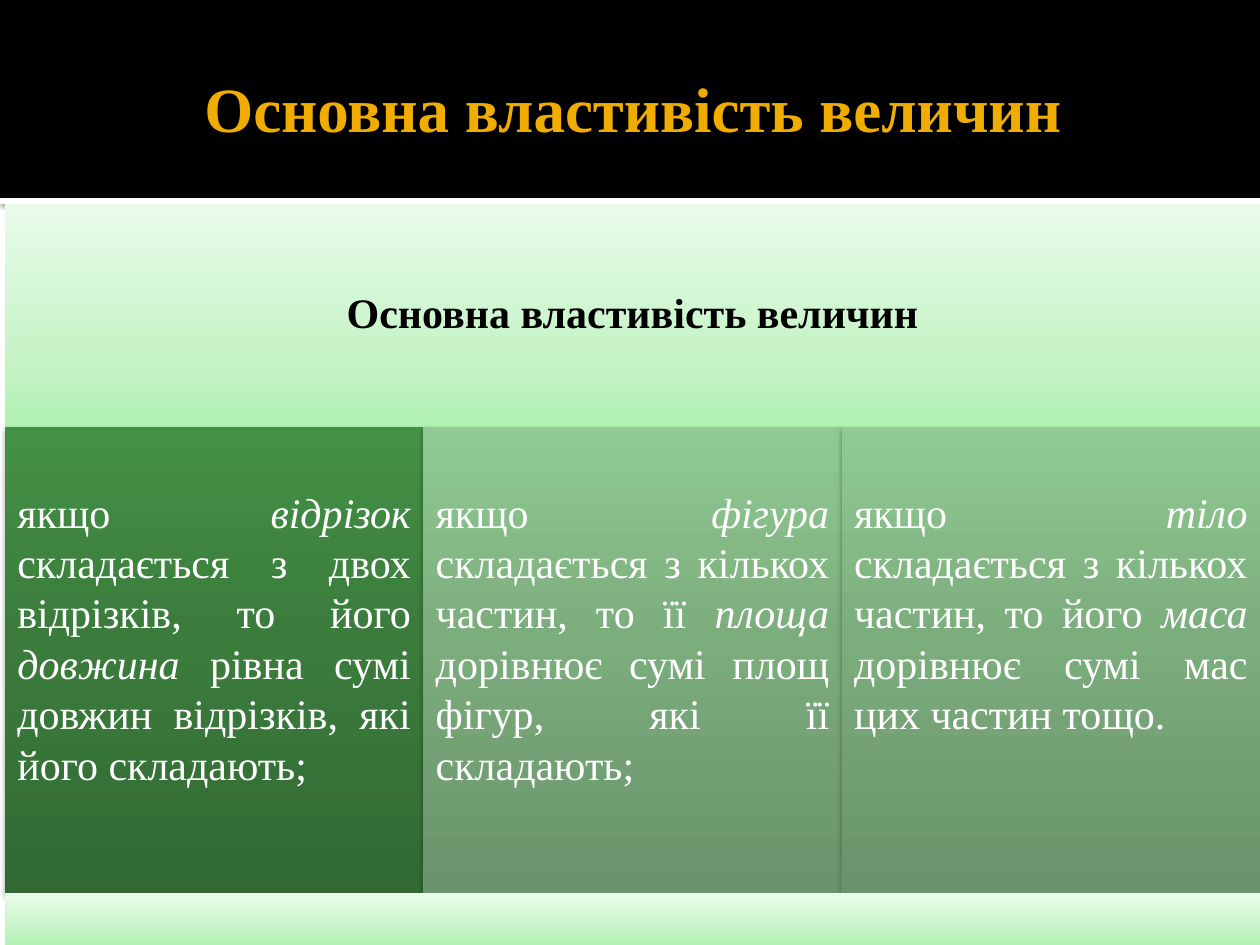
"""Build a slide on the main property of quantities, with three example panels."""
from lxml import etree
from pptx import Presentation
from pptx import util as u
from pptx.dml.color import RGBColor
from pptx.enum import shapes, text
from pptx.oxml.ns import qn

TITLE = "Основна властивість величин"
PANELS = [
    ("dark", [("якщо ", False), ("відрізок", True),
              (" складається з двох відрізків, то його ", False), ("довжина", True),
              (" рівна сумі довжин відрізків, які його складають;", False)]),
    ("soft", [("якщо ", False), ("фігура", True),
              (" складається з кількох частин, то її ", False), ("площа", True),
              (" дорівнює сумі площ фігур, які її складають;", False)]),
    ("soft", [("якщо ", False), ("тіло", True),
              (" складається з кількох частин, то його ", False), ("маса", True),
              (" дорівнює сумі мас цих частин тощо.", False)]),
]
COLORS = {"black": "000000", "white": "FFFFFF", "gold": "F0AD00"}
GRADIENTS = {
    "pale": [(0, "B1F1B2"), (35, "C8F4C9"), (100, "E9FCEA")],
    "dark": [(0, "326933"), (55, "3B7C3C"), (100, "449146")],
    "soft": [(0, "69936A"), (55, "7CAD7D"), (100, "90CA92")],
}
FONT = "Times New Roman"
WIDTH, HEIGHT = 25.4, 19.05
BAND_HEIGHT = 3.99
LEFT, HEADER_TOP, PANEL_TOP, FOOTER_TOP = 0.1, 4.11, 8.6, 18.01
INSET = 0.25


def add_color(parent, color):
    return etree.SubElement(parent, qn("a:srgbClr"), val=color)


def add_gradient(box, stops):
    fill = etree.Element(qn("a:gradFill"), rotWithShape="1")
    stop_list = etree.SubElement(fill, qn("a:gsLst"))
    for position, color in stops:
        add_color(etree.SubElement(stop_list, qn("a:gs"), pos=str(position * 1000)), color)
    etree.SubElement(fill, qn("a:lin"), ang=str(270 * 60000), scaled="0")
    box._element.spPr.find(qn("a:ln")).addprevious(fill)


def add_shadow(box, opacity, blur, distance):
    effects = box._element.spPr.find(qn("a:effectLst"))
    shadow = etree.SubElement(effects, qn("a:outerShdw"), blurRad=str(u.Pt(blur)),
                              dist=str(u.Pt(distance)), dir=str(90 * 60000), rotWithShape="0")
    color = add_color(shadow, COLORS["black"])
    etree.SubElement(color, qn("a:alpha"), val=str(opacity * 1000))


def add_block(page, left, top, width, height, fill):
    box = page.shapes.add_shape(shapes.MSO_SHAPE.RECTANGLE,
                                *map(u.Cm, (left, top, width, height)))
    box.line.fill.background()
    box.shadow.inherit = False
    if fill in GRADIENTS:
        add_gradient(box, GRADIENTS[fill])
    else:
        box.fill.solid()
        box.fill.fore_color.rgb = RGBColor.from_string(COLORS[fill])
    return box


def write(box, runs, size, color, align, bold=False, spacing=None,
          anchor=text.MSO_ANCHOR.MIDDLE, insets=(INSET,) * 4):
    frame = box.text_frame
    frame.word_wrap = True
    frame.vertical_anchor = anchor
    (frame.margin_left, frame.margin_top,
     frame.margin_right, frame.margin_bottom) = map(u.Cm, insets)
    para = frame.paragraphs[0]
    para.alignment = align
    para.line_spacing = spacing
    for words, italic in runs:
        span = para.add_run()
        span.text = words
        span.font.name = FONT
        span.font.size = u.Pt(size)
        span.font.bold = bold
        span.font.italic = italic
        span.font.color.rgb = RGBColor.from_string(COLORS[color])


def main():
    deck = Presentation()
    deck.slide_width, deck.slide_height = u.Cm(WIDTH), u.Cm(HEIGHT)
    page = deck.slides.add_slide(deck.slide_layouts[6])
    center, justify = text.PP_ALIGN.CENTER, text.PP_ALIGN.JUSTIFY
    inner_width = WIDTH - LEFT

    strip = add_block(page, 0, BAND_HEIGHT, WIDTH, HEADER_TOP - BAND_HEIGHT, "white")
    add_shadow(strip, 60, 2.5, 0.8)
    add_block(page, 0, 0, WIDTH, BAND_HEIGHT, "black")
    title = page.shapes.add_textbox(*map(u.Cm, (1.27, 0.43, 22.86, 3.48)))
    write(title, [(TITLE, False)], 36, "gold", center, bold=True,
          insets=(0.25, 0.13, 0.13, 0.13))

    header = add_block(page, LEFT, HEADER_TOP, inner_width, PANEL_TOP - HEADER_TOP, "pale")
    write(header, [(TITLE, False)], 24, "black", center, bold=True, spacing=0.9)

    panel_width = inner_width / len(PANELS)
    for index, (fill, runs) in enumerate(PANELS):
        panel = add_block(page, LEFT + index * panel_width, PANEL_TOP,
                          panel_width, FOOTER_TOP - PANEL_TOP, fill)
        add_shadow(panel, 38, 3.1, 2)
        write(panel, runs, 24, "white", justify, spacing=u.Pt(28.8),
              anchor=text.MSO_ANCHOR.TOP, insets=(INSET, 1.2, INSET, INSET))

    add_block(page, LEFT, FOOTER_TOP, inner_width, HEIGHT - FOOTER_TOP, "pale")
    deck.save("out.pptx")


if __name__ == "__main__":
    main()
